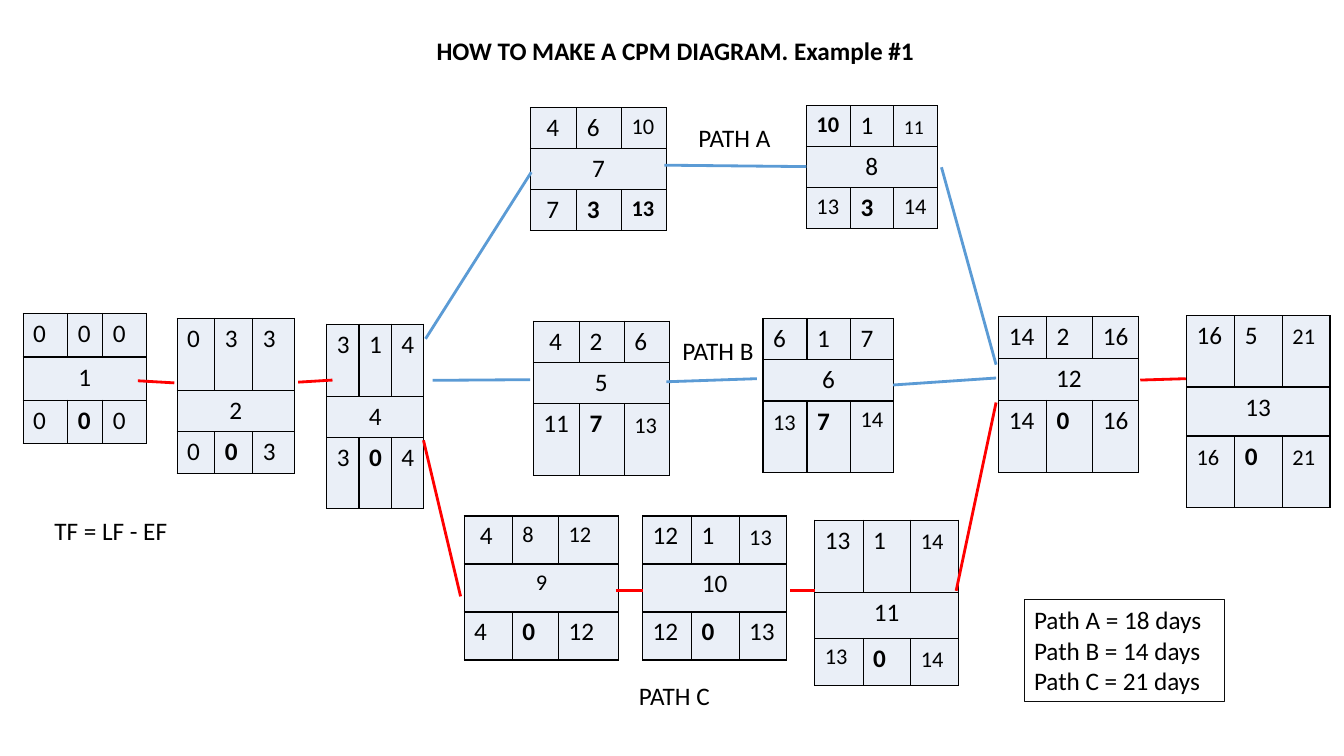
from lxml.etree import SubElement
from pptx import Presentation
from pptx.dml.color import RGBColor
from pptx.enum.shapes import MSO_CONNECTOR, MSO_SHAPE
from pptx.enum.text import MSO_ANCHOR, MSO_AUTO_SIZE, PP_ALIGN
from pptx.oxml.ns import qn
from pptx.util import Pt

BLACK = RGBColor(0x00, 0x00, 0x00)
EDGE = RGBColor(0x0D, 0x0D, 0x0D)
PALE = RGBColor(0xEA, 0xEF, 0xF7)
BLUE = RGBColor(0x5B, 0x9B, 0xD5)
RED = RGBColor(0xFF, 0x00, 0x00)

# Cell marks: b bold, s 16 pt, t 14 pt, d dropped to the 18 pt baseline, i indented
NODES = [
    (16.5, 224, (32, 25, 31), (31, 31, 31), "0 0 0", "1", "0 0b 0"),
    (126.5, 227.5, (27, 27, 30), (51.5, 29.5, 30), "0 3 3", "2", "0 0b 3"),
    (233.5, 231.5, (23, 23, 23), (51.5, 29.5, 51), "3 1 4", "4", "3 0b 4"),
    (381, 229.5, (33, 32, 32), (29.5, 29.5, 51), "4i 2 6", "5", "11 7b 13sd"),
    (545, 227.5, (31.5, 31, 31), (29.5, 29.5, 51), "6 1 7", "6", "13sd 7b 14s"),
    (713.5, 226, (34, 33, 33), (30, 30, 51.5), "14 2 16", "12", "14 0b 16"),
    (847.5, 225.5, (34.5, 34, 34), (51, 35, 51), "16 5 21sd", "13", "16sd 0b 21sd"),
    (379, 77, (33, 32, 32), (29.3, 29.3, 29.3), "4i 6 10s", "7", "7i 3b 13sb"),
    (331.5, 368.5, (34.5, 33, 43), (34.3, 34.3, 34.3), "4i 8s 12s", "9s", "4 0b 12"),
    (576, 75.5, (31.5, 31, 31), (29.3, 29.3, 29.3), "10sb 1 11td", "8", "13s 3b 14s"),
    (459, 368.5, (35, 34, 34), (34.3, 34.3, 34.3), "12 1 13sd", "10", "12 0b 13"),
    (582, 371.5, (34.5, 34, 34), (51.5, 33, 33.5), "13 1 14sd", "11", "13s 0b 14sd"),
]

LINKS = [
    (98.5, 272, 124.5, 273.5, RED),
    (213, 273, 237.5, 271.5, RED),
    (638, 275, 711.5, 270, BLUE),
    (814.5, 271.5, 847, 270.5, RED),
    (309, 271.7, 378.7, 271.2, BLUE),
    (476, 272.7, 540.7, 270.5, BLUE),
    (474.5, 118, 576, 119, BLUE),
    (440, 422, 459, 422, RED),
    (564.5, 422, 582, 422, RED),
    (683, 422, 711.5, 287.5, RED),
    (302.5, 314.5, 329, 426, RED),
    (304, 242, 379.5, 123, BLUE),
    (672.5, 119.5, 711.5, 260.5, BLUE),
]

LABELS = [
    ("TF = LF - EF", 31.7, 364.5, 167, True),
    ("PATH C", 449.3, 482.5, 65.5, False),
    ("PATH B", 480.3, 236, 65.5, False),
    ("PATH A", 491.8, 83.5, 66, False),
]


class Chart:
    font = "Calibri"
    size = 18

    def __init__(self, slide):
        self.slide = slide
        self.shapes = slide.shapes

    def style(self, frame, size=size, bold=False, align=PP_ALIGN.LEFT):
        for para in frame.paragraphs:
            para.alignment = align
            for run in para.runs:
                run.font.name = self.font
                run.font.size = Pt(size)
                run.font.bold = bold
                run.font.color.rgb = BLACK

    def title(self, text, left, top, width, height):
        head = self.shapes.title
        head.left, head.top = Pt(left), Pt(top)
        head.width, head.height = Pt(width), Pt(height)
        frame = head.text_frame
        frame.text = text
        frame.word_wrap = True
        frame.auto_size = MSO_AUTO_SIZE.NONE
        frame.vertical_anchor = MSO_ANCHOR.BOTTOM
        frame.paragraphs[0].line_spacing = 0.9
        self.style(frame, bold=True, align=PP_ALIGN.CENTER)

    def cell(self, cell, mark="", center=False):
        props = cell._tc.get_or_add_tcPr()
        for side in ("lnL", "lnR", "lnT", "lnB"):
            line = SubElement(props, qn("a:" + side), w=str(Pt(1)))
            fill = SubElement(line, qn("a:solidFill"))
            SubElement(fill, qn("a:srgbClr"), val=str(BLACK))
        cell.fill.solid()
        cell.fill.fore_color.rgb = PALE
        if not mark:
            return
        size = 16 if "s" in mark else 14 if "t" in mark else self.size
        cell.text_frame.text = mark.rstrip("bstdi")
        cell.margin_top = Pt(3.6 + (self.size - size if "d" in mark else 0))
        if not center:
            cell.margin_left = Pt(11.3 if "i" in mark else 7.2)
            cell.margin_right = Pt(0)
        align = PP_ALIGN.CENTER if center else PP_ALIGN.LEFT
        self.style(cell.text_frame, size, "b" in mark, align)

    def node(self, left, top, cols, rows, early, name, late):
        frame = self.shapes.add_table(
            3, 3, Pt(left), Pt(top), Pt(sum(cols)), Pt(sum(rows)))
        table = frame.table
        table.first_row = table.horz_banding = False
        for col, width in zip(table.columns, cols):
            col.width = Pt(width)
        for row, height in zip(table.rows, rows):
            row.height = Pt(height)
        table.cell(1, 0).merge(table.cell(1, 2))
        grid = (early.split(), (name, "", ""), late.split())
        for r, marks in enumerate(grid):
            for c, mark in enumerate(marks):
                self.cell(table.cell(r, c), mark, r == 1)

    def link(self, x1, y1, x2, y2, color):
        line = self.shapes.add_connector(
            MSO_CONNECTOR.STRAIGHT, Pt(x1), Pt(y1), Pt(x2), Pt(y2))
        line.line.color.rgb = color
        line.line.width = Pt(2)
        SubElement(line._element.spPr, qn("a:effectLst"))

    def label(self, text, left, top, width, wrap):
        box = self.shapes.add_textbox(Pt(left), Pt(top), Pt(width), Pt(29))
        frame = box.text_frame
        frame.text = text
        frame.word_wrap = wrap
        frame.auto_size = MSO_AUTO_SIZE.SHAPE_TO_FIT_TEXT
        self.style(frame)

    def panel(self, text, left, top, width, height):
        box = self.shapes.add_shape(
            MSO_SHAPE.RECTANGLE, Pt(left), Pt(top), Pt(width), Pt(height))
        box.shadow.inherit = False
        box.fill.background()
        box.line.color.rgb = EDGE
        box.line.width = Pt(0.75)
        frame = box.text_frame
        frame.text = text
        frame.word_wrap = True
        frame.auto_size = MSO_AUTO_SIZE.SHAPE_TO_FIT_TEXT
        frame.vertical_anchor = MSO_ANCHOR.TOP
        self.style(frame)


def main():
    deck = Presentation()
    deck.slide_width, deck.slide_height = Pt(960), Pt(540)
    chart = Chart(deck.slides.add_slide(deck.slide_layouts[5]))
    chart.title("HOW TO MAKE A CPM DIAGRAM. Example #1", 122.4, 26.6, 720, 24.5)
    for node in NODES:
        chart.node(*node)
    for link in LINKS:
        chart.link(*link)
    for label in LABELS:
        chart.label(*label)
    days = (("A", 18), ("B", 14), ("C", 21))
    text = "\n".join(f"Path {name} = {count} days" for name, count in days)
    chart.panel(text, 731.5, 428.4, 143.3, 72.7)
    deck.save("out.pptx")


if __name__ == "__main__":
    main()
